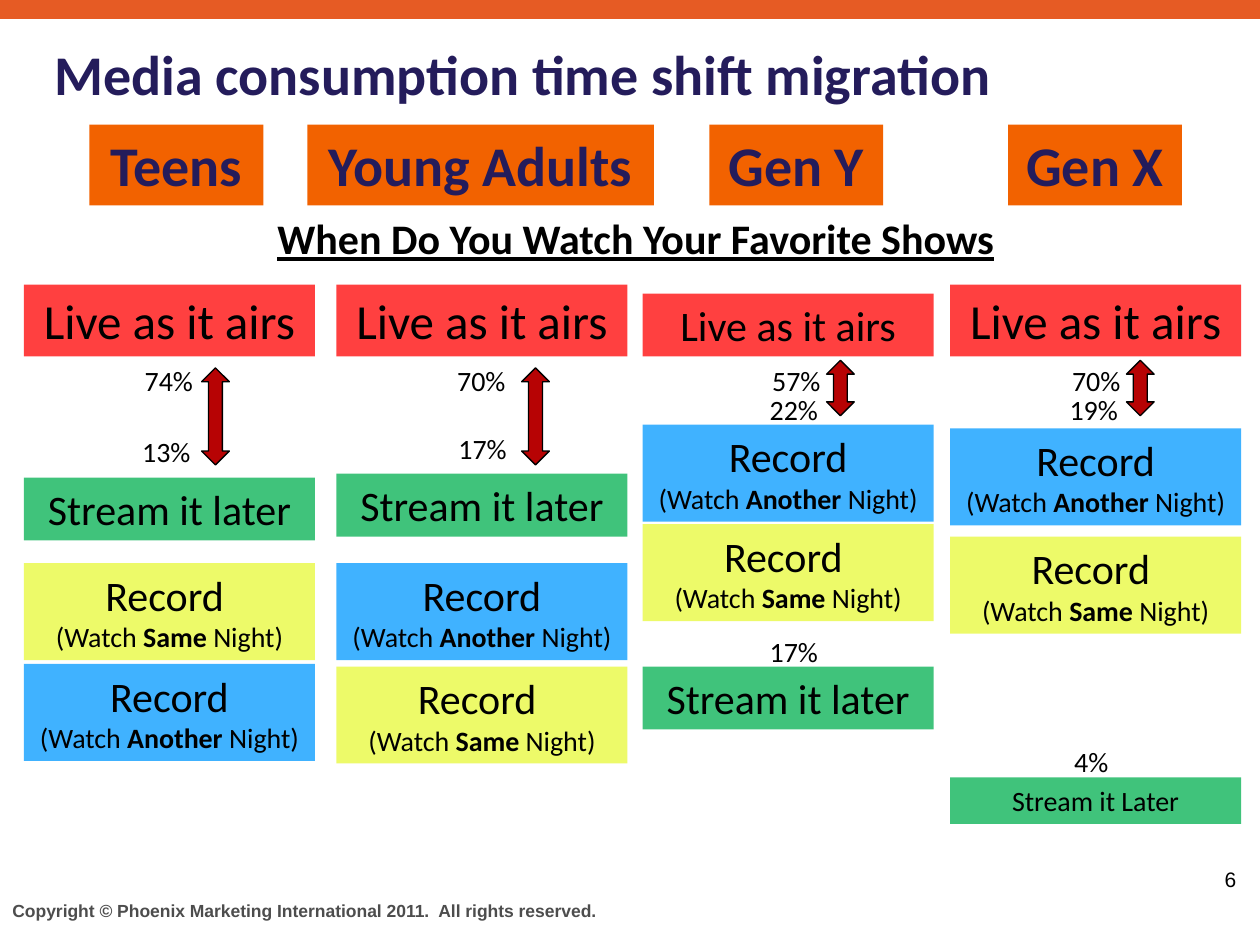
from pptx import Presentation
from pptx.dml.color import RGBColor
from pptx.enum import shapes, text
from pptx.oxml.ns import qn
from pptx.util import Inches, Pt
from lxml import etree

NAVY = RGBColor(0x24, 0x1C, 0x5B)
BLACK = RGBColor(0, 0, 0)
GRAY = RGBColor(0x4D, 0x4D, 0x4D)
BAND = RGBColor(0xE6, 0x5B, 0x24)
ORANGE = RGBColor(0xF2, 0x62, 0x00)
RED = RGBColor(0xFF, 0, 0)
GREEN = RGBColor(0, 0xB0, 0x50)
YELLOW = RGBColor(0xE7, 0xF9, 0x38)
BLUE = RGBColor(0, 0x99, 0xFF)
DARK_RED = RGBColor(0xB7, 0x03, 0x04)

HEADLINE = "Media consumption time shift migration"
QUESTION = "When Do You Watch Your Favorite Shows"
COPYRIGHT = "Copyright © Phoenix Marketing International 2011.  All rights reserved."
PAGE = "6"

LIVE, STREAM = "Live as it airs", "Stream it later"
SAME = [[("Record ", 24, False)],
        [("(Watch ", 16, False), ("Same", 16, True), (" Night)", 16, False)]]
ANOTHER = [[("Record", 24, False)],
           [("(Watch ", 16, False), ("Another", 16, True), (" Night)", 16, False)]]

BOX_WIDTH = 2.31
BOX_HEIGHT = {16: 0.37, 24: 0.5, 28: 0.57}
RECORD_HEIGHT = 0.77
LIVE_BOTTOM = 2.83
SHARE_WIDTH, SHARE_HEIGHT = 0.72, 0.37
ARROW_WIDTH = 0.22

GROUPS = [
    {"name": "Teens", "label": (0.71, 1.38), "left": 0.19, "live": 28,
     "choices": [(STREAM, 24, GREEN, 3.79), (SAME, 24, YELLOW, 4.47), (ANOTHER, 24, BLUE, 5.27)],
     "shares": [("74%", 0.98, 2.84), ("13%", 0.96, 3.4)], "arrow": (1.6, 2.92, 0.77)},
    {"name": "Young Adults", "label": (2.44, 2.75), "left": 2.67, "live": 28,
     "choices": [(STREAM, 24, GREEN, 3.76), (ANOTHER, 24, BLUE, 4.47), (SAME, 24, YELLOW, 5.29)],
     "shares": [("70%", 3.46, 2.84), ("17%", 3.47, 3.38)], "arrow": (4.14, 2.92, 0.77)},
    {"name": "Gen Y", "label": (5.63, 1.38), "left": 5.1, "live": 24,
     "choices": [(ANOTHER, 24, BLUE, 3.37), (SAME, 24, YELLOW, 4.16), (STREAM, 24, GREEN, 5.29)],
     "shares": [("57%", 5.96, 2.84), ("22%", 5.94, 3.07), ("17%", 5.94, 4.99)],
     "arrow": (6.56, 2.86, 0.44)},
    {"name": "Gen X", "label": (8, 1.38), "left": 7.54, "live": 28,
     "choices": [(ANOTHER, 24, BLUE, 3.4), (SAME, 24, YELLOW, 4.26),
                 ("Stream it Later", 16, GREEN, 6.17)],
     "shares": [("70%", 8.34, 2.84), ("19%", 8.32, 3.07), ("4%", 8.3, 5.86)],
     "arrow": (8.94, 2.86, 0.44)},
]


def write(shape, content, size=16, color=BLACK, bold=False, underline=None, font="Calibri",
          align=text.PP_ALIGN.CENTER, anchor=text.MSO_ANCHOR.TOP):
    frame = shape.text_frame
    frame.word_wrap = True
    frame.auto_size = text.MSO_AUTO_SIZE.NONE
    frame.vertical_anchor = anchor
    lines = [[(content, size, bold)]] if isinstance(content, str) else content
    for number, line in enumerate(lines):
        paragraph = frame.add_paragraph() if number else frame.paragraphs[0]
        paragraph.alignment = align
        for words, run_size, run_bold in line:
            run = paragraph.add_run()
            run.text = words
            run.font.name = font
            run.font.size = Pt(run_size)
            run.font.bold = run_bold
            run.font.underline = underline
            run.font.color.rgb = color


def place(left, top, width, height):
    return [Inches(value) for value in (left, top, width, height)]


def block(slide, area, fill, opacity=100, preset=shapes.MSO_SHAPE.RECTANGLE):
    shape = slide.shapes.add_shape(preset, *place(*area))
    shape.shadow.inherit = False
    shape.fill.solid()
    shape.fill.fore_color.rgb = fill
    shape.line.fill.background()
    if opacity < 100:
        tint = shape.fill._xPr.find(qn("a:solidFill"))[0]
        etree.SubElement(tint, qn("a:alpha")).set("val", str(opacity * 1000))
    return shape


def caption(slide, area, content, **style):
    write(slide.shapes.add_textbox(*place(*area)), content, **style)


def draw_group(slide, group):
    label_left, label_width = group["label"]
    write(block(slide, (label_left, 0.99, label_width, 0.64), ORANGE), group["name"],
          size=32, color=NAVY, bold=True)
    live_top = LIVE_BOTTOM - BOX_HEIGHT[group["live"]]
    for content, size, fill, top in [(LIVE, group["live"], RED, live_top)] + group["choices"]:
        height = BOX_HEIGHT[size] if isinstance(content, str) else RECORD_HEIGHT
        box = block(slide, (group["left"], top, BOX_WIDTH, height), fill, opacity=75)
        write(box, content, size=size)
    for share, left, top in group["shares"]:
        caption(slide, (left, top, SHARE_WIDTH, SHARE_HEIGHT), share)
    left, top, height = group["arrow"]
    arrow = block(slide, (left, top, ARROW_WIDTH, height), DARK_RED,
                  preset=shapes.MSO_SHAPE.UP_DOWN_ARROW)
    arrow.line.color.rgb = BLACK
    arrow.line.width = Pt(0.75)


def main():
    deck = Presentation()
    deck.slide_width, deck.slide_height = Inches(10), Inches(7.5)
    slide = deck.slides.add_slide(deck.slide_layouts[5])
    title = slide.shapes.title
    title.left, title.top, title.width, title.height = place(0.33, 0.08, 9.25, 1)
    write(title, HEADLINE, size=32, color=NAVY, bold=True,
          align=text.PP_ALIGN.LEFT, anchor=text.MSO_ANCHOR.MIDDLE)
    block(slide, (0, 0, 10, 0.15), BAND)
    caption(slide, (0.24, 1.64, 9.61, 0.5), QUESTION, size=24, bold=True, underline=True)
    for group in GROUPS:
        draw_group(slide, group)
    caption(slide, (9.51, 6.83, 0.4, 0.3), PAGE, size=12, font="Arial",
            align=text.PP_ALIGN.RIGHT)
    caption(slide, (0, 7.09, 6.58, 0.29), COPYRIGHT, size=10, font="Arial", color=GRAY,
            bold=True, align=text.PP_ALIGN.LEFT)
    deck.save("out.pptx")


if __name__ == "__main__":
    main()
